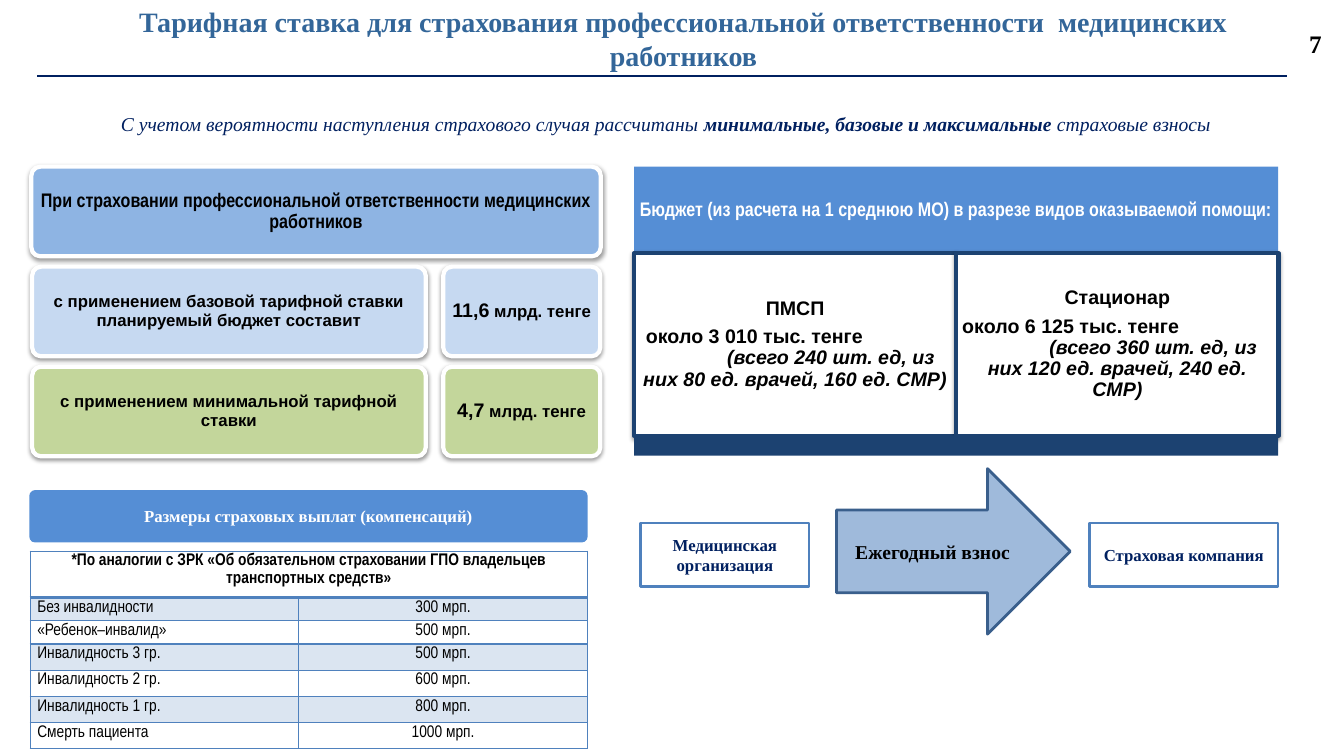
from lxml.etree import SubElement
from pptx import Presentation
from pptx.dml.color import RGBColor
from pptx.enum.shapes import MSO_CONNECTOR as Connector, MSO_SHAPE as Shape
from pptx.enum.text import MSO_ANCHOR as Anchor, MSO_AUTO_SIZE as AutoSize, PP_ALIGN as Align
from pptx.oxml.ns import qn
from pptx.util import Cm, Pt

COLORS = {
    "white": "FFFFFF", "black": "000000", "navy": "002060", "title": "336699",
    "header": "8EB4E3", "base": "C6D9F1", "minimum": "C3D69B", "blue": "558ED5",
    "dark": "1C4271", "accent": "4F81BD", "arrow_edge": "3A5F8C",
}
SERIF, SANS, NARROW = "Times New Roman", "Arial", "Arial Narrow"


def color(name):
    return RGBColor.from_string(COLORS[name])


def paint(fill, name, alpha=None):
    """Fill with a named colour; None leaves it empty, alpha is a percentage."""
    if name is None:
        fill.background()
        return
    fill.solid()
    fill.fore_color.rgb = color(name)
    if alpha:
        value = fill._xPr.find(qn("a:solidFill"))[0]
        SubElement(value, qn("a:alpha"), val=str(alpha * 1000))


def write(para, *parts, size=14, font=SANS, ink="black", bold=True, italic=False,
          align=Align.CENTER, spacing=None, after=None, left=0, first=0):
    """Add spans; a part is a string or a (string, overrides) pair."""
    para.alignment = align
    if spacing:
        para.line_spacing = spacing
    if after:
        para.space_after = Pt(after)
    if left or first:
        properties = para._p.get_or_add_pPr()
        properties.set("marL", str(Cm(left)))
        properties.set("indent", str(Cm(first)))
    for part in parts:
        text, change = (part, {}) if isinstance(part, str) else part
        span = para.add_run()
        span.text = text
        span.font.name = font
        span.font.size = Pt(change.get("size", size))
        span.font.bold = change.get("bold", bold)
        span.font.italic = change.get("italic", italic)
        span.font.color.rgb = color(ink)


class Page:
    """The current slide and its drawing style."""

    def __init__(self, deck):
        self.shapes = deck.slides.add_slide(deck.slide_layouts[6]).shapes

    def frame(self, shape, pad, wrap=True):
        frame = shape.text_frame
        frame.word_wrap = wrap
        frame.vertical_anchor = Anchor.MIDDLE
        frame.margin_left = frame.margin_right = Cm(pad[0])
        frame.margin_top = frame.margin_bottom = Cm(pad[1])
        return frame

    def text(self, place, *parts, wrap=True, **style):
        box = self.shapes.add_textbox(*map(Cm, place))
        frame = self.frame(box, (0.25, 0.13), wrap)
        if not wrap:
            frame.auto_size = AutoSize.SHAPE_TO_FIT_TEXT
        write(frame.paragraphs[0], *parts, **style)

    def box(self, place, *parts, kind=Shape.RECTANGLE, fill=None, alpha=None, edge=None,
            width=2, corner=None, shadow=False, pad=(0.25, 0.13), **style):
        box = self.shapes.add_shape(kind, *map(Cm, place))
        box.shadow.inherit = False
        if corner:
            box.adjustments[0] = corner
        paint(box.fill, fill, alpha)
        paint(box.line.fill, edge)
        if edge:
            box.line.width = Pt(width)
        if shadow:
            effects = box._element.spPr.find(qn("a:effectLst"))
            outer = SubElement(effects, qn("a:outerShdw"), blurRad=str(Pt(3.1)),
                               dist=str(Pt(1.6)), dir="5400000", rotWithShape="0")
            value = SubElement(outer, qn("a:srgbClr"), val=COLORS["black"])
            SubElement(value, qn("a:alpha"), val="38000")
        frame = self.frame(box, pad)
        if parts:
            write(frame.paragraphs[0], *parts, **style)
        return frame

    def card(self, place, *parts, fill, **style):
        self.box(place, *parts, kind=Shape.ROUNDED_RECTANGLE, fill=fill, edge="white", width=3,
                 corner=0.1, shadow=True, pad=(0.15, 0.15), spacing=0.9, **style)

    def line(self, start, end, ink, width):
        line = self.shapes.add_connector(Connector.STRAIGHT, *map(Cm, start + end))
        line.line.color.rgb = color(ink)
        line.line.width = Pt(width)
        SubElement(line._element.spPr, qn("a:effectLst"))

    def cell(self, cell, text, shaded=False, bottom=1, **style):
        write(cell.text_frame.paragraphs[0], text, size=12, font=NARROW, spacing=1.15, **style)
        properties = cell._tc.get_or_add_tcPr()
        for side in ("lnL", "lnR", "lnT", "lnB"):
            width = bottom if side == "lnB" else 1
            border = SubElement(properties, qn(f"a:{side}"), w=str(Pt(width)))
            solid = SubElement(border, qn("a:solidFill"))
            SubElement(solid, qn("a:srgbClr"), val=COLORS["accent"])
        paint(cell.fill, "accent" if shaded else None, 20)

    def table(self, place, title, rows, columns, heights):
        table = self.shapes.add_table(len(rows) + 1, len(columns), *map(Cm, place)).table
        table.first_row = table.horz_banding = False
        for column, width in zip(table.columns, columns):
            column.width = Cm(width)
        for row, height in zip(table.rows, heights):
            row.height = Cm(height)
        for cell in table.iter_cells():
            cell.margin_left = cell.margin_right = Cm(0.18)
            cell.margin_top = cell.margin_bottom = 0
            cell.text_frame.paragraphs[0].font.size = Pt(12)
        table.cell(0, 0).merge(table.cell(0, 1))
        self.cell(table.cell(0, 0), title, bottom=2)
        for index, (case, payment) in enumerate(rows, 1):
            shaded = index % 2 == 1
            self.cell(table.cell(index, 0), case, shaded, bold=False, align=Align.JUSTIFY)
            self.cell(table.cell(index, 1), payment, shaded, bold=False)


def draw_heading(page):
    page.text((3, 0.05, 28.45, 1.83),
              "Тарифная ставка для страхования профессиональной ответственности  медицинских "
              "работников", size=20, font=SERIF, ink="title")
    page.line((0.94, 1.92), (32.44, 1.92), "navy", 1.5)
    page.box((1.83, 2.29, 29.9, 1.65),
             "С учетом вероятности наступления страхового случая рассчитаны ",
             ("минимальные, базовые и максимальные", {"bold": True}), " страховые взносы",
             kind=Shape.ROUNDED_RECTANGLE, font=SERIF, ink="navy", bold=False, italic=True)
    page.text((32.74, 0.58, 0.84, 1.02), "7", wrap=False, size=18, font=SERIF, align=Align.LEFT)


def draw_tariffs(page):
    top, step, height = 4.2, 2.52, 2.26
    page.card((0.79, top, 14.35, height),
              "При страховании профессиональной ответственности медицинских работников",
              fill="header", font=NARROW)
    tariffs = [
        ("с применением базовой тарифной ставки планируемый бюджет составит", "11,6", "base"),
        ("с применением минимальной тарифной ставки", "4,7", "minimum"),
    ]
    for index, (label, amount, fill) in enumerate(tariffs, 1):
        y = top + index * step
        page.card((0.81, y, 9.92, height), label, fill=fill, size=12)
        page.card((11.17, y, 3.96, height), amount, (" млрд. тенге", {"size": 12}), fill=fill)


def draw_budget(page):
    left, width, half = 15.98, 16.23, 8.12
    page.box((left, 4.2, width, 2.18),
             "Бюджет (из расчета на 1 среднюю МО) в разрезе видов оказываемой помощи:",
             fill="blue", font=NARROW, ink="white", pad=(0.05, 0.15), spacing=0.9)
    budgets = [
        ("ПМСП", "около 3 010 тыс. тенге", "(всего 240 шт. ед, из них 80 ед. врачей, 160 ед. СМР)",
         0.15),
        ("Стационар", "около 6 125 тыс. тенге",
         "(всего 360 шт. ед, из них 120 ед. врачей, 240 ед. СМР)", 0),
    ]
    for index, (care, amount, staff, indent) in enumerate(budgets):
        frame = page.box((left + index * half, 6.38, half, 4.6), care, fill="white", edge="dark",
                         width=3, shadow=True, pad=(0.15, 0.15), spacing=0.9, after=5)
        write(frame.add_paragraph(), amount, align=Align.LEFT, spacing=0.9, left=indent)
        write(frame.add_paragraph(), staff, italic=True, spacing=0.9, first=1.8)
    page.box((left, 10.97, width, 0.51), fill="dark")


def draw_payments(page):
    page.box((0.74, 12.35, 14.07, 1.32), "Размеры страховых выплат (компенсаций)",
             kind=Shape.ROUNDED_RECTANGLE, corner=0.11, fill="blue", size=12, font=SERIF,
             ink="white")
    rows = [
        ("Без инвалидности", "300 мрп."), ("«Ребенок–инвалид»", "500 мрп."),
        ("Инвалидность 3 гр.", "500 мрп."), ("Инвалидность 2 гр.", "600 мрп."),
        ("Инвалидность 1 гр.", "800 мрп."), ("Смерть пациента", "1000 мрп."),
    ]
    page.table((0.76, 13.89, 14.05, 4.61),
               "*По аналогии с ЗРК «Об обязательном страховании ГПО владельцев "
               "транспортных средств»",
               rows, (6.76, 7.29), [0.91] + [0.53] * 2 + [0.66] * 4)


def draw_contribution(page):
    for left, width, party in [(27.46, 4.75, "Страховая компания"),
                               (16.15, 4.24, "Медицинская организация")]:
        page.box((left, 13.18, width, 1.6), party, fill="white", edge="accent", size=12,
                 font=SERIF, ink="navy")
    page.box((21.08, 11.81, 5.89, 4.17), "Ежегодный взнос", kind=Shape.RIGHT_ARROW,
             fill="accent", alpha=54, edge="arrow_edge", font=SERIF)


def main():
    deck = Presentation()
    deck.slide_width, deck.slide_height = Cm(33.87), Cm(19.05)
    page = Page(deck)
    for draw in (draw_heading, draw_tariffs, draw_budget, draw_payments, draw_contribution):
        draw(page)
    deck.save("out.pptx")


if __name__ == "__main__":
    main()
